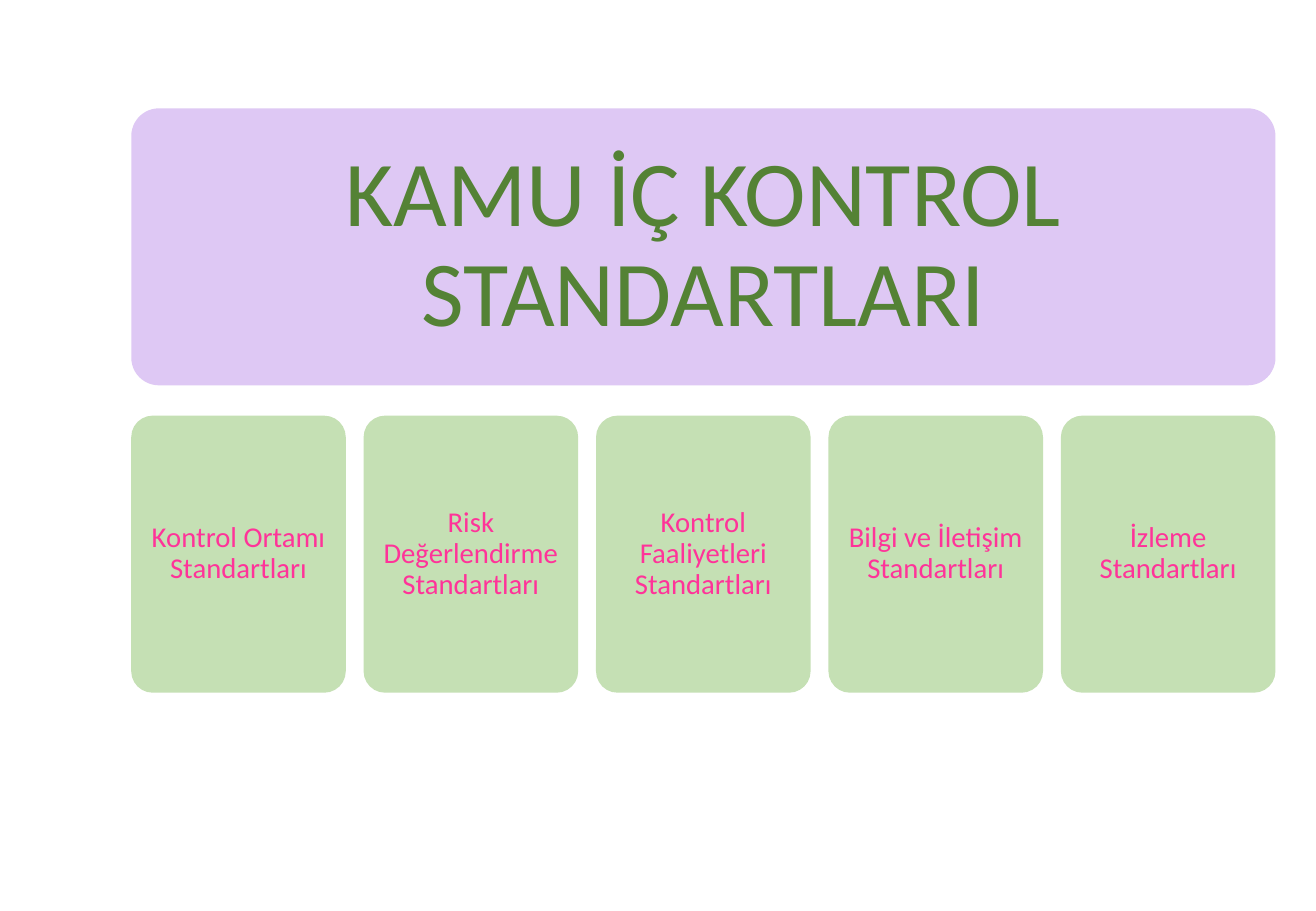
"""Build the slide on public internal control standards."""
import pptx
import pptx.dml.color
import pptx.enum.shapes
import pptx.enum.text
import pptx.util

Pt = pptx.util.Pt


def color(value):
    return pptx.dml.color.RGBColor.from_string(value)


class Board:
    font = "Calibri"
    corner = 0.1
    line_spacing = 0.9

    def __init__(self, s):
        self.s = s

    def card(self, text, left, top, width, height, fill, ink, size, inset):
        sp = self.s.shapes.add_shape(
            pptx.enum.shapes.MSO_SHAPE.ROUNDED_RECTANGLE,
            Pt(left), Pt(top), Pt(width), Pt(height))
        sp.adjustments[0] = self.corner
        sp.shadow.inherit = False
        sp.fill.solid()
        sp.fill.fore_color.rgb = color(fill)
        sp.line.fill.background()
        tf = sp.text_frame
        tf.word_wrap = True
        tf.vertical_anchor = pptx.enum.text.MSO_ANCHOR.MIDDLE
        tf.margin_left = tf.margin_right = Pt(inset)
        tf.margin_top = tf.margin_bottom = Pt(inset)
        p = tf.paragraphs[0]
        p.text = text
        p.alignment = pptx.enum.text.PP_ALIGN.CENTER
        p.line_spacing = self.line_spacing
        p.font.name = self.font
        p.font.size = Pt(size)
        p.font.color.rgb = color(ink)


def main():
    prs = pptx.Presentation()
    prs.slide_width, prs.slide_height = Pt(780), Pt(540)
    board = Board(prs.slides.add_slide(prs.slide_layouts[6]))

    left, width, height = 77.8, 678.2, 164.2
    title_top, row_top = 64.2, 246.4
    board.card("KAMU İÇ KONTROL STANDARTLARI", left, title_top, width, height,
               "DEC8F4", "548235", 55, 16.5)

    standards = ["Kontrol Ortamı", "Risk Değerlendirme", "Kontrol Faaliyetleri",
                 "Bilgi ve İletişim", "İzleme"]
    gap = 10.6
    card_width = (width - gap * (len(standards) - 1)) / len(standards)
    for i, standard in enumerate(standards):
        board.card(f"{standard} Standartları", left + i * (card_width + gap), row_top,
                   card_width, height, "C5E0B4", "FF3399", 17, 5)

    prs.save("out.pptx")


if __name__ == "__main__":
    main()
